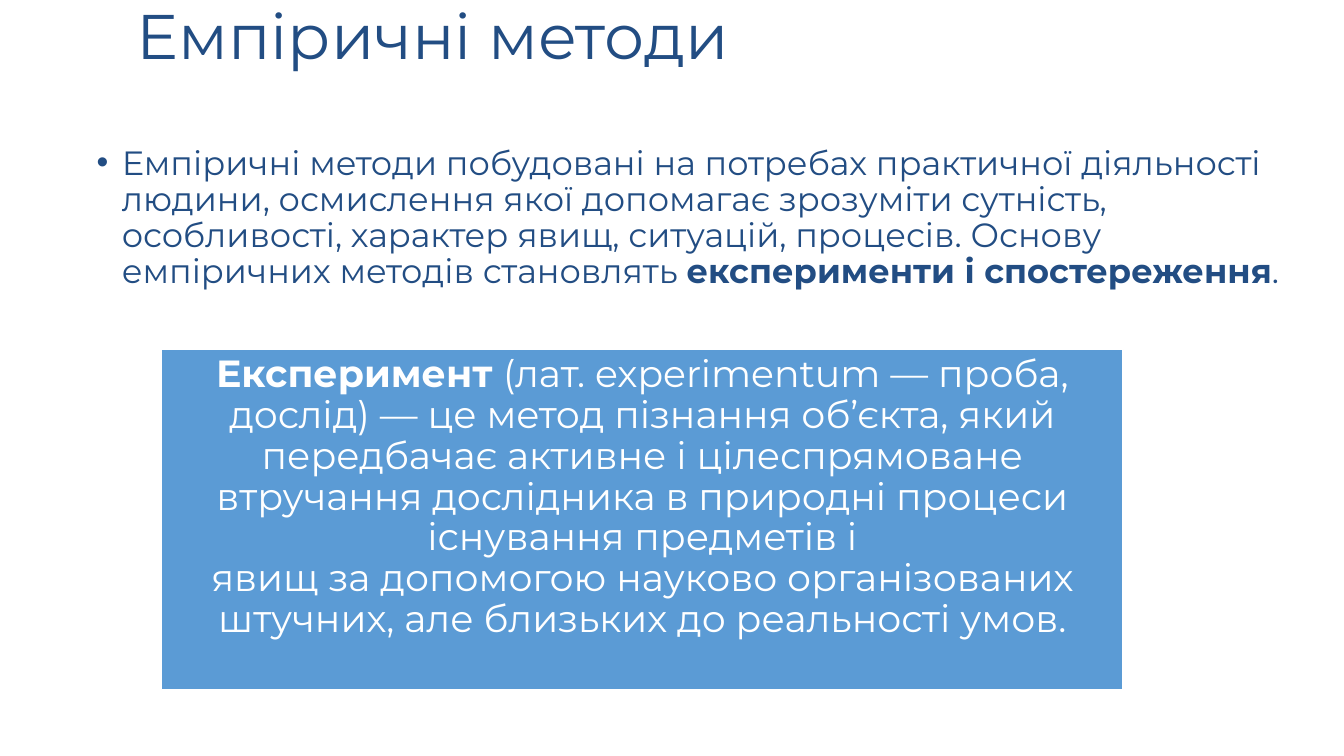
from lxml import etree
from pptx import Presentation
from pptx.dml.color import RGBColor
from pptx.enum import shapes, text
from pptx.oxml.ns import qn
from pptx.util import Inches, Pt

COLORS = {"navy": "224D83", "blue": "5B9BD5", "white": "FFFFFF"}
FONT = "Montserrat"

TITLE = [("Емпіричні методи", False)]
OVERVIEW = [
    ("Емпіричні методи побудовані на потребах практичної діяльності людини, "
     "осмислення якої допомагає зрозуміти сутність,\n"
     "особливості, характер явищ, ситуацій, процесів. "
     "Основу емпіричних методів становлять ", False),
    ("експерименти і спостереження", True),
    (".", False),
]
EXPERIMENT = [
    ("Експеримент ", True),
    ("(лат. experimentum — проба, дослід) — це метод пізнання об’єкта, "
     "який передбачає активне і цілеспрямоване\n"
     "втручання дослідника в природні процеси існування предметів і\n"
     "явищ за допомогою науково організованих штучних, "
     "але близьких до реальності умов.", False),
]


def rgb(name):
    return RGBColor.from_string(COLORS[name])


def write(shape, parts, size, color, align=text.PP_ALIGN.LEFT, side=0.1):
    frame = shape.text_frame
    frame.word_wrap = True
    frame.vertical_anchor = text.MSO_ANCHOR.TOP
    frame.margin_left = frame.margin_right = Inches(side)
    frame.margin_top = frame.margin_bottom = Inches(0.05)
    paragraph = frame.paragraphs[0]
    paragraph.alignment = align
    paragraph.line_spacing = 0.9
    for words, bold in parts:
        for index, line in enumerate(words.split("\n")):
            if index:
                paragraph.add_line_break()
            run = paragraph.add_run()
            run.text = line
            run.font.name = FONT
            run.font.size = Pt(size)
            run.font.bold = bold
            run.font.color.rgb = rgb(color)
    return paragraph


def add_bullet(paragraph, indent):
    properties = paragraph._p.get_or_add_pPr()
    properties.set("marL", str(Inches(indent)))
    properties.set("indent", str(-Inches(indent)))
    etree.SubElement(properties, qn("a:buFont")).set("typeface", "Arial")
    etree.SubElement(properties, qn("a:buChar")).set("char", "•")


def main():
    deck = Presentation()
    deck.slide_width, deck.slide_height = Inches(13.33), Inches(7.5)
    slide = deck.slides.add_slide(deck.slide_layouts[6])

    title = slide.shapes.add_textbox(Inches(1.26), 0, Inches(12), Inches(1.4))
    write(title, TITLE, 45, "navy")

    overview = slide.shapes.add_textbox(
        Inches(0.86), Inches(1.4), Inches(12.26), Inches(1.9))
    add_bullet(write(overview, OVERVIEW, 24, "navy"), 0.25)

    experiment = slide.shapes.add_shape(
        shapes.MSO_SHAPE.RECTANGLE,
        Inches(1.6), Inches(3.47), Inches(9.54), Inches(3.37))
    experiment.shadow.inherit = False
    experiment.fill.solid()
    experiment.fill.fore_color.rgb = rgb("blue")
    experiment.line.color.rgb = rgb("white")
    experiment.line.width = Pt(1)
    write(experiment, EXPERIMENT, 27, "white", text.PP_ALIGN.CENTER, 0.11)

    deck.save("out.pptx")


if __name__ == "__main__":
    main()
